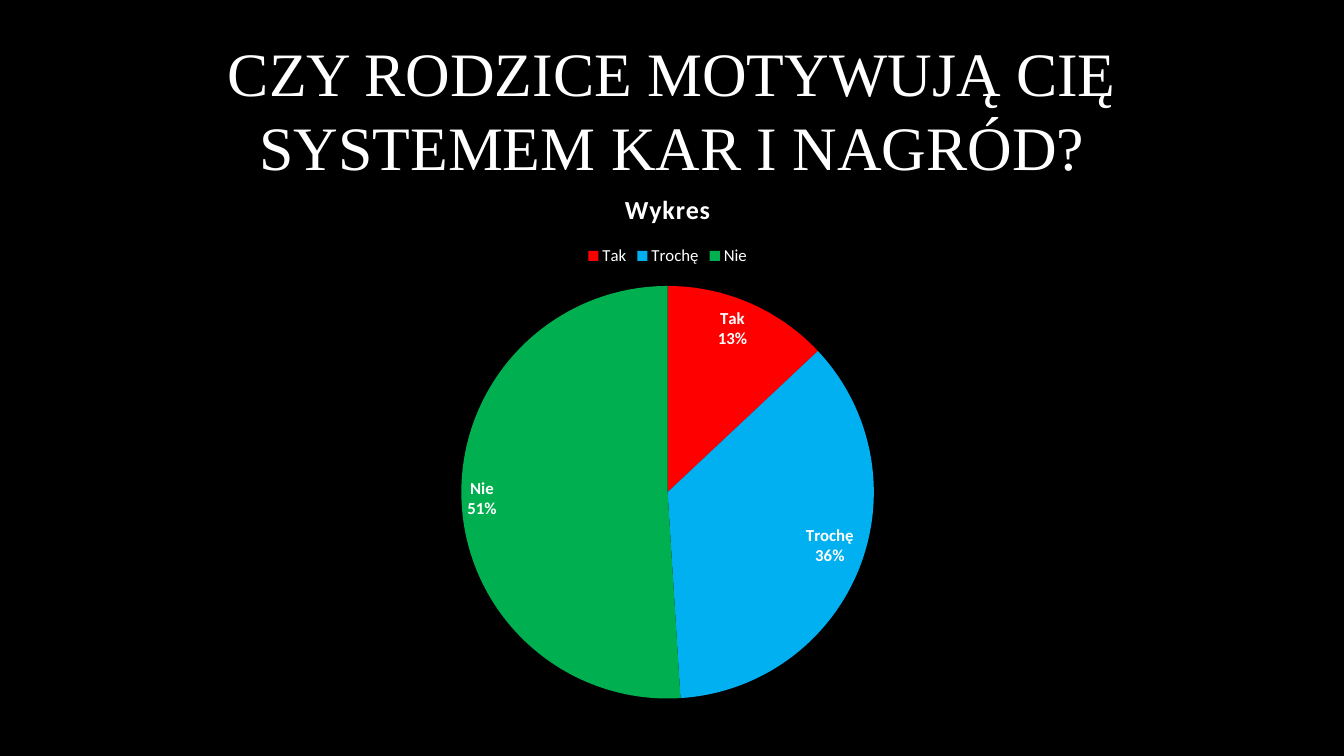
from dataclasses import dataclass

from lxml import etree
from pptx import Presentation
from pptx import util as u
from pptx.chart.data import CategoryChartData
from pptx.dml.color import RGBColor
from pptx.enum import chart as ch
from pptx.enum import text
from pptx.oxml.ns import qn

WHITE = "FFFFFF"


@dataclass
class Answer:
    label: str
    percent: int
    color: str


ANSWERS = [
    Answer("Tak", 13, "FF0000"),
    Answer("Trochę", 36, "00B0F0"),
    Answer("Nie", 51, "00B050"),
]


def rgb(value: str) -> RGBColor:
    return RGBColor.from_string(value)


def set_font(font, size: float, name: str = "Calibri", bold: bool = False) -> None:
    font.name, font.size, font.bold = name, u.Pt(size), bold
    font.color.rgb = rgb(WHITE)


def add_question(slide, wording: str) -> None:
    question = slide.shapes.add_textbox(u.Cm(2.34), u.Cm(0.9), u.Cm(29.21), u.Cm(3.7))
    frame = question.text_frame
    frame.word_wrap = True
    frame.vertical_anchor = text.MSO_ANCHOR.MIDDLE
    paragraph = frame.paragraphs[0]
    paragraph.text = wording
    paragraph.alignment = text.PP_ALIGN.CENTER
    set_font(paragraph.font, 44.1, "Times New Roman")


def place_plot(chart, **fractions: float) -> None:
    """Fix the plot area, in fractions of the chart frame."""
    plot_area = chart.plots[0]._element.getparent()
    layout = plot_area.find(qn("c:layout"))
    if layout is None:
        layout = etree.Element(qn("c:layout"))
        plot_area.insert(0, layout)
    manual = etree.SubElement(layout, qn("c:manualLayout"))
    settings = {"layoutTarget": "inner", "xMode": "edge", "yMode": "edge", **fractions}
    for tag, value in settings.items():
        etree.SubElement(manual, qn(f"c:{tag}")).set("val", str(value))


def add_answers(slide, name: str, answers: list[Answer]) -> None:
    data = CategoryChartData()
    data.categories = [answer.label for answer in answers]
    data.add_series(name, [answer.percent for answer in answers])
    chart = slide.shapes.add_chart(
        ch.XL_CHART_TYPE.PIE, u.Cm(0.58), u.Cm(4.29), u.Cm(32.49), u.Cm(13.64), data
    ).chart
    set_font(chart.font, 10)

    # Heading and legend
    chart.has_title = True
    heading = chart.chart_title.text_frame.paragraphs[0].add_run()
    heading.text = name
    set_font(heading.font, 18.6, bold=True)
    heading.font._element.set("spc", "50")
    chart.has_legend = True
    chart.legend.position = ch.XL_LEGEND_POSITION.TOP
    chart.legend.include_in_layout = False
    set_font(chart.legend.font, 12)

    # Slices
    pie = chart.plots[0]
    pie.vary_by_categories = True
    for index, answer in enumerate(answers):
        slice_format = pie.series[0].points[index].format
        slice_format.fill.solid()
        slice_format.fill.fore_color.rgb = rgb(answer.color)
        slice_format.line.fill.background()

    # Slice labels
    labels = pie.series[0].data_labels
    labels.show_value = False
    labels.show_category_name = True
    labels.show_percentage = True
    labels.number_format, labels.number_format_is_linked = "0%", False
    labels.position = ch.XL_LABEL_POSITION.INSIDE_END
    set_font(labels.font, 12, bold=True)
    separator = etree.Element(qn("c:separator"))
    separator.text = "\n"
    labels._element.find(qn("c:showBubbleSize")).addnext(separator)

    place_plot(chart, x=0.34, y=0.21, w=0.32, h=0.77)


def main() -> None:
    deck = Presentation()
    deck.slide_width, deck.slide_height = u.Cm(33.87), u.Cm(19.05)
    slide = deck.slides.add_slide(deck.slide_layouts[6])
    slide.background.fill.solid()
    slide.background.fill.fore_color.rgb = rgb("000000")
    add_question(slide, "CZY RODZICE MOTYWUJĄ CIĘ SYSTEMEM KAR I NAGRÓD?")
    add_answers(slide, "Wykres", ANSWERS)
    deck.save("out.pptx")


if __name__ == "__main__":
    main()
